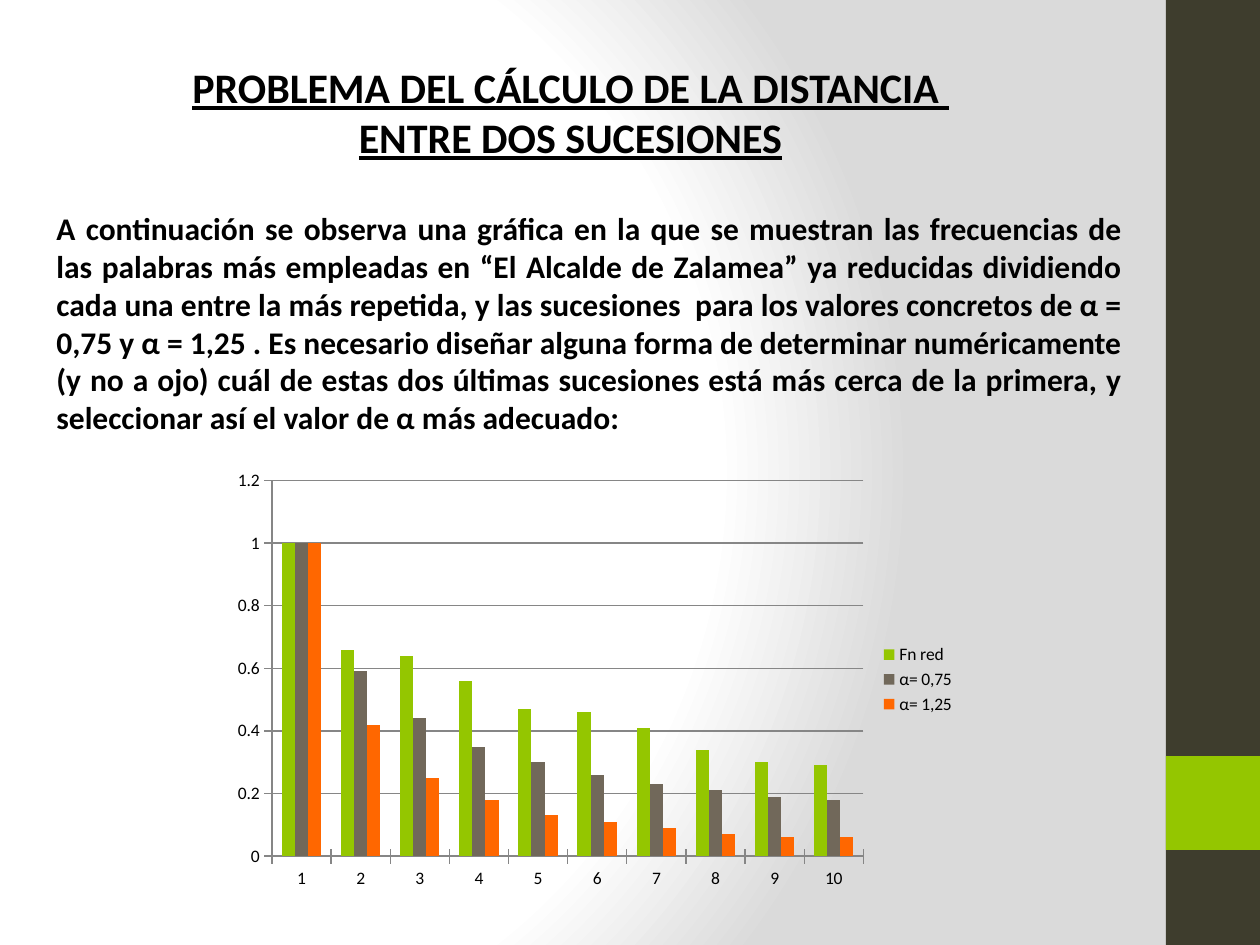
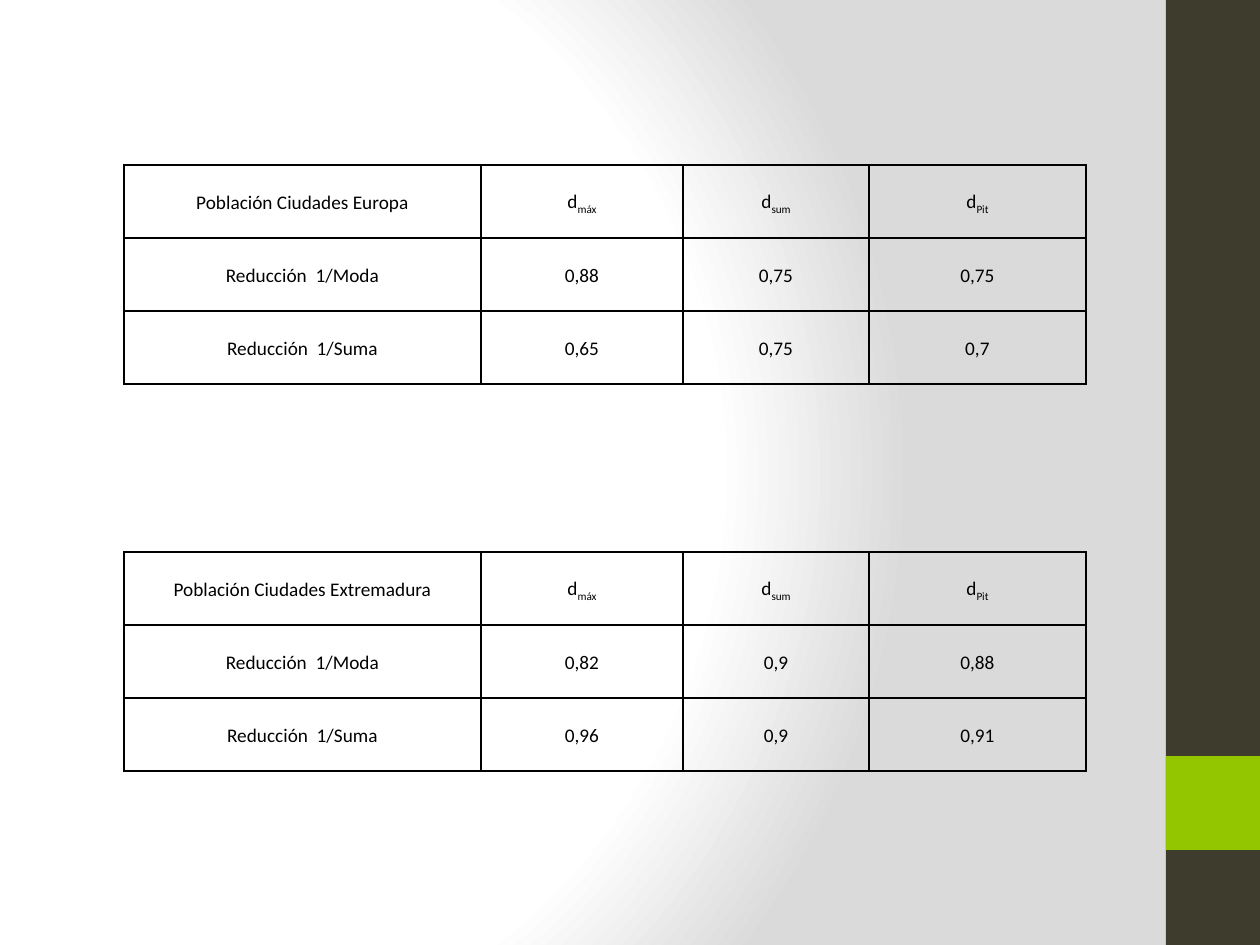
"""Builds two slides on measuring the distance between sequences."""
import pptx
import pptx.chart.data
import pptx.dml.color
import pptx.enum.chart
import pptx.enum.shapes
import pptx.enum.text
import pptx.oxml
import pptx.oxml.ns
import pptx.util

RGBColor = pptx.dml.color.RGBColor
Align = pptx.enum.text.PP_ALIGN
Anchor = pptx.enum.text.MSO_ANCHOR

BLACK = RGBColor(0x00, 0x00, 0x00)
WHITE = RGBColor(0xFF, 0xFF, 0xFF)
SHADE = RGBColor(0xDA, 0xDA, 0xDA)
DARK = RGBColor(0x3E, 0x3D, 0x2D)
GREEN = RGBColor(0x94, 0xC6, 0x00)
BROWN = RGBColor(0x71, 0x68, 0x5A)
ORANGE = RGBColor(0xFF, 0x67, 0x00)
GRID = RGBColor(0x86, 0x86, 0x86)

FONT = "Calibri"
SCALE = 914400 / 126
WIDTH, HEIGHT = 1260, 945
TITLE_ONLY, BLANK = 5, 6
NAMESPACE = pptx.oxml.ns.nsdecls("a")

PROBLEM_TITLE = "PROBLEMA DEL CÁLCULO DE LA DISTANCIA \nENTRE DOS SUCESIONES"
PROBLEM_TEXT = (
    "A continuación se observa una gráfica en la que se muestran las frecuencias de las "
    "palabras más empleadas en “El Alcalde de Zalamea” ya reducidas dividiendo cada una "
    "entre la más repetida, y las sucesiones  para los valores concretos de α = 0,75 y "
    "α = 1,25 . Es necesario diseñar alguna forma de determinar numéricamente (y no a ojo) "
    "cuál de estas dos últimas sucesiones está más cerca de la primera, y seleccionar así "
    "el valor de α más adecuado:"
)
FREQUENCIES = [
    ("Fn red ", GREEN, (1, 0.66, 0.64, 0.56, 0.47, 0.46, 0.41, 0.34, 0.3, 0.29)),
    ("α= 0,75", BROWN, (1, 0.59, 0.44, 0.35, 0.3, 0.26, 0.23, 0.21, 0.19, 0.18)),
    ("α= 1,25", ORANGE, (1, 0.42, 0.25, 0.18, 0.13, 0.11, 0.09, 0.07, 0.06, 0.06)),
]
DISTANCES = ("máx", "sum", "Pit")
REDUCTIONS = ("Reducción  1/Moda", "Reducción  1/Suma")
POPULATIONS = [
    ("Población Ciudades Europa", 165, [("0,88", "0,75", "0,75"), ("0,65", "0,75", "0,7")]),
    ("Población Ciudades Extremadura", 552, [("0,82", "0,9", "0,88"), ("0,96", "0,9", "0,91")]),
]
COLUMN_WIDTHS = (357, 202, 186, 217)
ROW_HEIGHT = 73


def px(length):
    """Turn pixels into EMU."""
    return pptx.util.Emu(round(length * SCALE))


class Deck:
    """Holds the shared style and the current slide."""

    def __init__(self):
        self.presentation = pptx.Presentation()
        self.presentation.slide_width = px(WIDTH)
        self.presentation.slide_height = px(HEIGHT)
        self.slide = None
        self.set_background()

    def set_background(self):
        """Give the master a radial gradient."""
        master = self.presentation.slide_master
        master.background.fill.solid()
        solid = master.element.xpath("p:cSld/p:bg/p:bgPr/a:solidFill")[0]
        stops = "".join(
            f'<a:gs pos="{position}"><a:srgbClr val="{color}"/></a:gs>'
            for position, color in ((0, WHITE), (75000, WHITE), (100000, SHADE))
        )
        gradient = pptx.oxml.parse_xml(
            f'<a:gradFill {NAMESPACE} rotWithShape="1"><a:gsLst>{stops}</a:gsLst>'
            '<a:path path="circle"><a:fillToRect l="20000" t="50000" r="100000" b="50000"/>'
            "</a:path></a:gradFill>"
        )
        solid.getparent().replace(solid, gradient)

    def new_slide(self, layout):
        """Start a slide with its side bands."""
        self.slide = self.presentation.slides.add_slide(self.presentation.slide_layouts[layout])
        self.band(0, HEIGHT, DARK)
        self.band(756, 94, GREEN)

    def band(self, top, height, color):
        """Draw a block in the right-hand strip."""
        shape = self.slide.shapes.add_shape(
            pptx.enum.shapes.MSO_SHAPE.RECTANGLE, px(1166), px(top), px(94), px(height)
        )
        shape.shadow.inherit = False
        shape.fill.solid()
        shape.fill.fore_color.rgb = color
        shape.line.fill.background()

    def style(self, paragraph, size, alignment, bold=False, underline=False):
        """Format a whole paragraph."""
        paragraph.alignment = alignment
        font = paragraph.font
        font.name, font.size, font.color.rgb = FONT, pptx.util.Pt(size), BLACK
        font.bold, font.underline = bold, underline

    def fill_frame(self, shape, text, size, alignment, underline=False):
        """Write bold text from the top of a shape."""
        frame = shape.text_frame
        frame.text = text
        frame.word_wrap = True
        frame.auto_size = pptx.enum.text.MSO_AUTO_SIZE.NONE
        frame.vertical_anchor = Anchor.TOP
        for paragraph in frame.paragraphs:
            self.style(paragraph, size, alignment, True, underline)

    def title(self, text, left, top, width, height):
        """Place and fill the title placeholder."""
        shape = self.slide.shapes.title
        shape.left, shape.top, shape.width, shape.height = map(px, (left, top, width, height))
        self.fill_frame(shape, text, 24, Align.CENTER, True)

    def text(self, text, left, top, width, height):
        """Add a justified text box."""
        shape = self.slide.shapes.add_textbox(*map(px, (left, top, width, height)))
        self.fill_frame(shape, text, 18, Align.JUSTIFY)

    def column_chart(self, series_rows, left, top, width, height):
        """Add a clustered column chart."""
        data = pptx.chart.data.CategoryChartData()
        data.categories = [str(rank) for rank in range(1, len(series_rows[0][2]) + 1)]
        for name, _, values in series_rows:
            data.add_series(name, values)
        chart = self.slide.shapes.add_chart(
            pptx.enum.chart.XL_CHART_TYPE.COLUMN_CLUSTERED,
            *map(px, (left, top, width, height)), data
        ).chart
        chart.has_title = False
        chart.font.name, chart.font.size = FONT, pptx.util.Pt(10)
        chart.font.color.rgb = BLACK
        chart.has_legend = True
        chart.legend.position = pptx.enum.chart.XL_LEGEND_POSITION.RIGHT
        chart.legend.include_in_layout = False
        plot = chart.plots[0]
        plot.gap_width, plot.overlap, plot.vary_by_categories = 150, 0, False
        for series, (_, color, _) in zip(plot.series, series_rows):
            series.format.fill.solid()
            series.format.fill.fore_color.rgb = color
        value_axis = chart.value_axis
        value_axis.minimum_scale, value_axis.maximum_scale = 0, 1.2
        value_axis.major_unit = 0.2
        value_axis.major_gridlines.format.line.color.rgb = GRID
        for axis in (chart.category_axis, value_axis):
            axis.major_tick_mark = pptx.enum.chart.XL_TICK_MARK.CROSS
            axis.format.line.color.rgb = GRID

    def table(self, rows, left, top):
        """Add a bordered table; a tuple cell is a base and its subscript."""
        shape = self.slide.shapes.add_table(
            len(rows), len(COLUMN_WIDTHS), px(left), px(top),
            px(sum(COLUMN_WIDTHS)), px(ROW_HEIGHT * len(rows))
        )
        table = shape.table
        table.first_row = table.horz_banding = False
        for column, width in zip(table.columns, COLUMN_WIDTHS):
            column.width = px(width)
        for row, contents in zip(table.rows, rows):
            row.height = px(ROW_HEIGHT)
            for cell, content in zip(row.cells, contents):
                self.cell(cell, content)

    def cell(self, cell, content):
        """Fill and format one table cell."""
        cell.fill.background()
        cell.vertical_anchor = Anchor.MIDDLE
        cell.margin_left = cell.margin_right = px(9)
        cell.margin_top = cell.margin_bottom = 0
        paragraph = cell.text_frame.paragraphs[0]
        self.style(paragraph, 11, Align.CENTER)
        paragraph.line_spacing = 1.15
        base, *subscripts = (content,) if isinstance(content, str) else content
        paragraph.add_run().text = base
        for subscript in subscripts:
            run = paragraph.add_run()
            run.text = subscript
            run.font._element.set("baseline", "-25000")
        properties = cell._tc.get_or_add_tcPr()
        for index, side in enumerate("LRTB"):
            border = pptx.oxml.parse_xml(
                f'<a:ln{side} {NAMESPACE} w="12700"><a:solidFill>'
                f'<a:srgbClr val="{BLACK}"/></a:solidFill></a:ln{side}>'
            )
            properties.insert(index, border)


def main():
    """Build and save the slides."""
    deck = Deck()
    deck.new_slide(TITLE_ONLY)
    deck.title(PROBLEM_TITLE, 94, 55, 953, 115)
    deck.text(PROBLEM_TEXT, 44, 203, 1091, 242)
    deck.column_chart(FREQUENCIES, 223, 462, 745, 435)

    deck.new_slide(BLANK)
    header = [("d", distance) for distance in DISTANCES]
    for population, top, values in POPULATIONS:
        body = [(name, *numbers) for name, numbers in zip(REDUCTIONS, values)]
        deck.table([(population, *header), *body], 124, top)
    deck.presentation.save("out.pptx")


if __name__ == "__main__":
    main()
